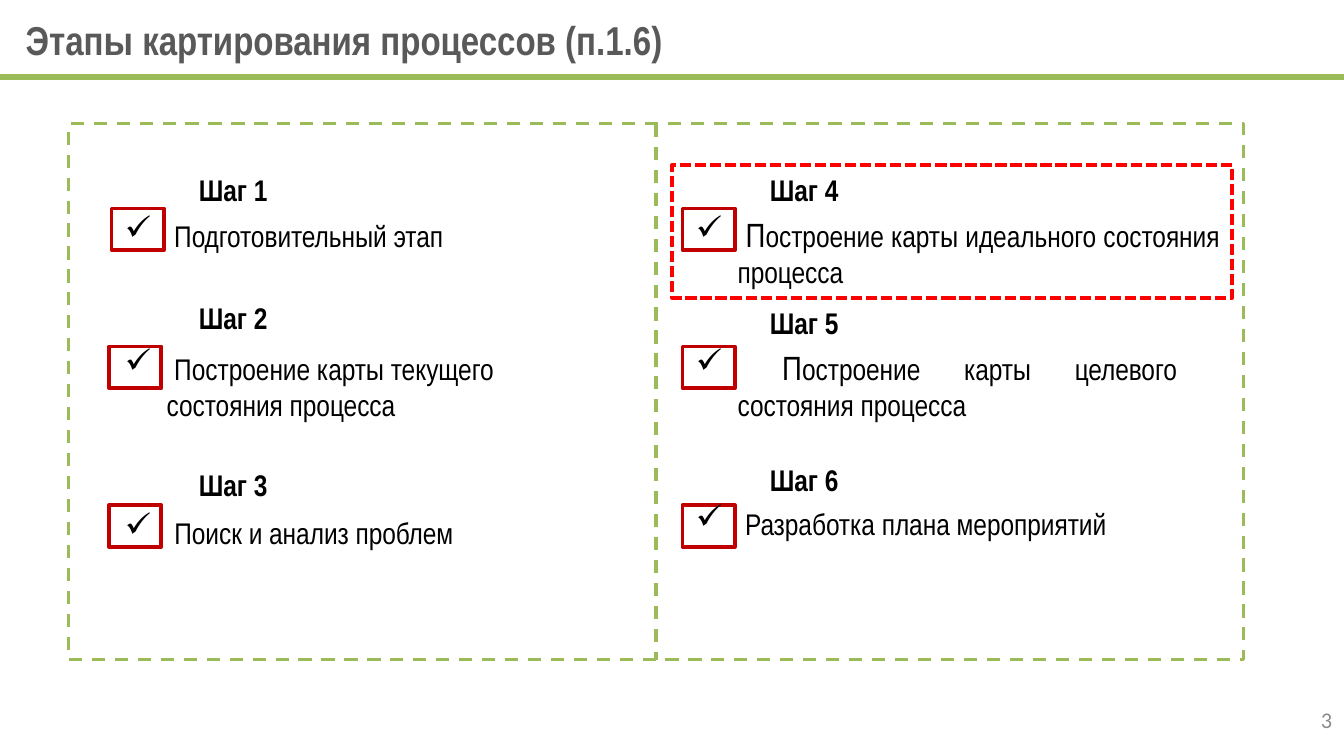
"""Build the slide listing the six steps of process mapping."""
from lxml.etree import SubElement
from pptx import Presentation
from pptx.dml.color import RGBColor
from pptx.enum.dml import MSO_LINE
from pptx.enum.shapes import MSO_CONNECTOR, MSO_SHAPE
from pptx.enum.text import MSO_ANCHOR as Anchor, PP_ALIGN as Align
from pptx.oxml.ns import qn
from pptx.util import Cm, Pt

GREEN = RGBColor(0x9B, 0xBB, 0x59)
DARK_RED = RGBColor(0xC0, 0x00, 0x00)
RED = RGBColor(0xFF, 0x00, 0x00)
BLACK = RGBColor(0x00, 0x00, 0x00)
GRAY = RGBColor(0x59, 0x59, 0x59)
LIGHT_GRAY = RGBColor(0x8C, 0x8C, 0x8C)
NARROW, CALIBRI = "Arial Narrow", "Calibri"

TITLE = "Этапы картирования процессов (п.1.6)"
PAGE_NUMBER = "3"
FRAME = (1.3, 2.34, 22.2, 10.13)
HIGHLIGHT = (12.7, 3.12, 10.59, 2.51)
COLUMN_LEFTS = (2.11, 12.9)
CHECKBOX_TOPS = (3.94, 6.55, 9.55)
CHECKBOX_SIZE = (0.99, 0.79)
HEADING_OFFSET, HEADING_SIZE = 1.4, (2.59, 0.94)
INDENT = 0.79

# Heading top, checkbox shift, text top, width, height, alignment, lead, lead font, rest
STEPS = [
    (3.12, 0, 3.91, 7.75, 1.02, None, " ", CALIBRI, "Подготовительный этап"),
    (5.54, -0.05, 6.43, 9.8, 1.7, None, " ", CALIBRI,
     "Построение карты текущего состояния процесса"),
    (8.69, -0.05, 9.53, 10.31, 1.02, None, " ", NARROW, "Поиск и анализ проблем"),
    (3.12, 0, 3.91, 10.41, 1.7, Align.JUSTIFY, " П", NARROW,
     "остроение карты идеального состояния процесса"),
    (5.64, 0, 6.43, 9.6, 1.7, Align.JUSTIFY, " П", NARROW,
     "остроение карты целевого состояния процесса"),
    (8.61, 0, 9.37, 10.39, 1.8, None, " ", NARROW, "Разработка плана мероприятий"),
]


def lengths(box):
    return [Cm(value) for value in box]


def style_run(run, size, font, color, bold=False):
    run.font.size, run.font.name, run.font.bold = Pt(size), font, bold
    run.font.color.rgb = color


def style_line(line, color, width, dash=None):
    line.color.rgb, line.width = color, Pt(width)
    if dash:
        line.dash_style = dash


def add_outline(slide, box, color, width, dash=None):
    outline = slide.shapes.add_shape(MSO_SHAPE.RECTANGLE, *lengths(box))
    outline.shadow.inherit = False
    outline.fill.background()
    style_line(outline.line, color, width, dash)
    return outline


def add_rule(slide, ends, width, dash=None):
    rule = slide.shapes.add_connector(MSO_CONNECTOR.STRAIGHT, *lengths(ends))
    SubElement(rule._element.spPr, qn("a:effectLst"))
    style_line(rule.line, GREEN, width, dash)
    return rule


def add_text(slide, box, runs, align=None, anchor=Anchor.TOP):
    frame = slide.shapes.add_textbox(*lengths(box)).text_frame
    frame.word_wrap, frame.vertical_anchor = True, anchor
    paragraph = frame.paragraphs[0]
    paragraph.alignment = align
    for text, *style in runs:
        run = paragraph.add_run()
        run.text = text
        style_run(run, *style)
    return paragraph


def add_check_bullet(paragraph):
    properties = paragraph._p.get_or_add_pPr()
    properties.set("marL", str(Cm(INDENT)))
    properties.set("indent", str(-Cm(INDENT)))
    SubElement(properties, qn("a:buChar"), char="✓")


def add_step(slide, index, step):
    heading_top, shift, top, width, height, align, lead, lead_font, rest = step
    column, row = divmod(index, len(CHECKBOX_TOPS))
    left = COLUMN_LEFTS[column]
    add_outline(slide, (left + shift, CHECKBOX_TOPS[row], *CHECKBOX_SIZE), DARK_RED, 2)
    add_text(slide, (left + HEADING_OFFSET, heading_top, *HEADING_SIZE),
             [(f"Шаг {index + 1}", 16, NARROW, BLACK, True)])
    runs = [(lead, 18, lead_font, BLACK), (rest, 16, NARROW, BLACK)]
    add_check_bullet(add_text(slide, (left, top, width, height), runs, align))


def main():
    deck = Presentation()
    deck.slide_width, deck.slide_height = Cm(25.4), Cm(14.29)
    slide = deck.slides.add_slide(deck.slide_layouts[5])

    title = slide.shapes.title
    title.left, title.top, title.width, title.height = lengths((0.23, 0.15, 22.86, 1.17))
    title.text_frame.text = TITLE
    title.text_frame.vertical_anchor = Anchor.MIDDLE
    heading = title.text_frame.paragraphs[0]
    heading.alignment = Align.LEFT
    style_run(heading.runs[0], 21.6, NARROW, GRAY, True)

    add_rule(slide, (0, 1.45, 25.4, 1.45), 3)
    add_text(slide, (19.51, 13.23, 5.92, 0.76),
             [(PAGE_NUMBER, 12, CALIBRI, LIGHT_GRAY)], Align.RIGHT, Anchor.MIDDLE)

    frame = add_outline(slide, FRAME, GREEN, 1.75, MSO_LINE.DASH)
    left, top, width, height = FRAME
    middle = left + width / 2
    divider = add_rule(slide, (middle, top, middle, top + height), 1.75, MSO_LINE.DASH)
    divider.begin_connect(frame, 0)
    divider.end_connect(frame, 2)

    for index, step in enumerate(STEPS):
        add_step(slide, index, step)
    add_outline(slide, HIGHLIGHT, RED, 2, MSO_LINE.SQUARE_DOT)
    deck.save("out.pptx")


if __name__ == "__main__":
    main()
